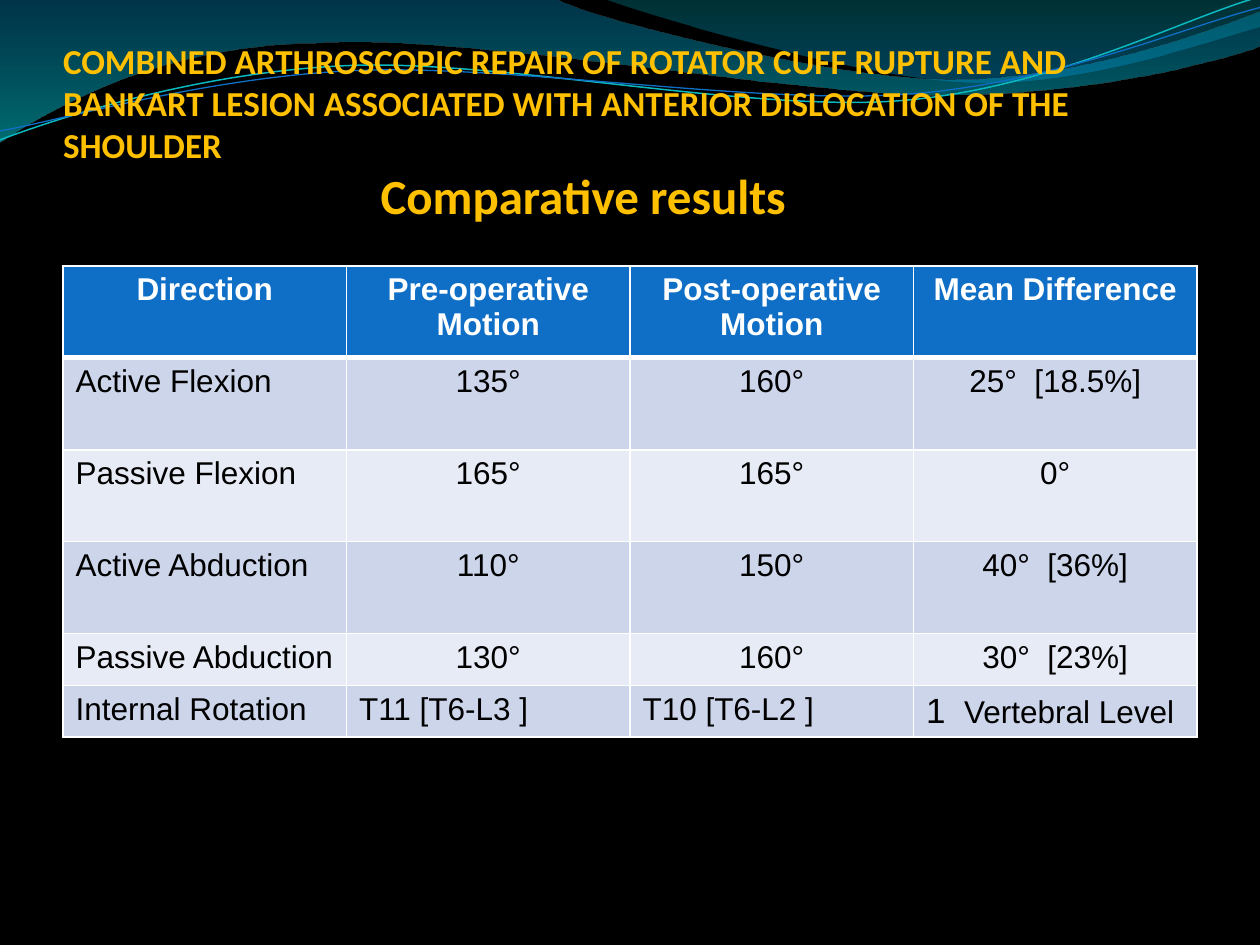
import math
from dataclasses import dataclass

from lxml import etree
from pptx import Presentation
from pptx.dml.color import RGBColor
from pptx.enum.text import MSO_ANCHOR, PP_ALIGN
from pptx.oxml.ns import qn
from pptx.util import Inches, Pt

LEFT, CENTER = PP_ALIGN.LEFT, PP_ALIGN.CENTER
BOTTOM = MSO_ANCHOR.BOTTOM
WIDTH, HEIGHT = 10, 7.5
MARGIN = 0.05 * WIDTH
CONTENT_WIDTH = WIDTH - 2 * MARGIN
BLACK, WHITE, GOLD, BLUE = "000000", "FFFFFF", "FFC000", "0F6FC6"
BANDS = ("CCD5EA", "E7EBF5")
TABLE_TOP = 2.11
TALL_ROW, SHORT_ROW = 0.73, 0.41
LINE_TILT = -2.7


@dataclass(frozen=True)
class Stop:
    position: float
    color: str
    opacity: int


@dataclass(frozen=True)
class Wave:
    """Points in inches: a start, then straight (1 point) or curved (3 point) segments."""
    start: tuple
    segments: tuple
    stops: tuple = ()
    line: str = ""
    line_width: float = 0
    center: tuple = (0, 0)
    tilt: float = 0


@dataclass(frozen=True)
class Piece:
    text: str
    size: float
    color: str
    font: str = "Arial"
    bold: bool = False


@dataclass(frozen=True)
class Row:
    texts: tuple
    height: float
    alignments: tuple = (LEFT, CENTER, CENTER, CENTER)


WAVES = (
    Wave((0, -0.01), (
        ((4.4, -0.01),),
        ((4.76, 0.17), (6.64, 0.63), (7.58, 0.63)),
        ((8.53, 0.63), (9.58, 0.26), (10, 0.09)),
        ((10.01, 0.36),),
        ((9.83, 0.44), (8.7, 0.76), (7.46, 0.75)),
        ((6.22, 0.75), (3.82, 0.28), (2.57, 0.34)),
        ((1.29, 0.35), (0.46, 0.83), (-0.01, 1.13)),
    ), stops=(Stop(0, "0074A1", 45), Stop(1, "00C6CF", 55))),
    Wave((4.79, -0.01), (
        ((5.09, 0.11), (6.82, 0.62), (7.69, 0.65)),
        ((8.56, 0.69), (9.61, 0.32), (10, 0.21)),
        ((10, 0),),
    ), stops=(Stop(0, "00A1A9", 30), Stop(0.8, "008BBF", 45))),
    Wave((0, 1.11), (
        ((0.48, 0.93), (1.58, 0.57), (2.77, 0.52)),
        ((3.95, 0.47), (5.93, 0.89), (7.13, 0.8)),
        ((8.33, 0.71), (9.38, 0.15), (9.98, -0.02)),
    ), line="0AB8BF", line_width=0.85, center=(4.99, 0.58), tilt=LINE_TILT),
    Wave((0, 1.04), (
        ((0.47, 0.96), (1.64, 0.61), (2.83, 0.56)),
        ((4.03, 0.51), (5.97, 0.83), (7.17, 0.75)),
        ((8.36, 0.67), (9.41, 0.21), (10, 0.06)),
    ), line=BLUE, line_width=0.75, center=(5, 0.59), tilt=LINE_TILT),
)

ROWS = (
    Row(("Direction", "Pre-operative Motion", "Post-operative Motion", "Mean Difference"),
        TALL_ROW, (CENTER,) * 4),
    Row(("Active Flexion", "135°", "160°", "25°  [18.5%]"), TALL_ROW),
    Row(("Passive Flexion", "165°", "165°", "0°"), TALL_ROW),
    Row(("Active Abduction", "110°", "150°", "40°  [36%]"), TALL_ROW),
    Row(("Passive Abduction", "130°", "160°", "30°  [23%]"), SHORT_ROW),
    Row(("Internal Rotation", "T11 [T6-L3 ]", "T10 [T6-L2 ]",
         (Piece("1 ", 20, BLACK), Piece(" Vertebral Level", 18, BLACK))),
        SHORT_ROW, (LEFT,) * 4),
)


def rgb(color: str) -> RGBColor:
    """Turn a hex string into a colour."""
    return RGBColor.from_string(color)


def untilted(point: tuple, wave: Wave) -> tuple:
    """Give a point's place in the wave's frame before it is rotated."""
    angle = math.radians(-wave.tilt)
    dx, dy = (value - middle for value, middle in zip(point, wave.center))
    x = wave.center[0] + dx * math.cos(angle) - dy * math.sin(angle)
    y = wave.center[1] + dx * math.sin(angle) + dy * math.cos(angle)
    return Inches(x), Inches(y)


def bend(shape, segments: tuple) -> None:
    """Join each three straight steps of a curved segment into one cubic curve."""
    steps = iter(list(shape.element.iter(qn("a:lnTo"))))
    for segment in segments:
        parts = [next(steps) for _ in segment]
        if len(parts) == 3:
            curve = etree.Element(qn("a:cubicBezTo"))
            parts[0].addprevious(curve)
            for part in parts:
                curve.append(part[0])
                part.getparent().remove(part)


def draw_wave(slide, wave: Wave) -> None:
    """Draw one filled band or thin line of the header decoration."""
    points = [untilted(point, wave) for segment in wave.segments for point in segment]
    builder = slide.shapes.build_freeform(*untilted(wave.start, wave))
    builder.add_line_segments(points, close=bool(wave.stops))
    shape = builder.convert_to_shape()
    bend(shape, wave.segments)
    shape.rotation = wave.tilt
    shape.shadow.inherit = False
    if not wave.stops:
        shape.fill.background()
        shape.line.color.rgb = rgb(wave.line)
        shape.line.width = Pt(wave.line_width)
        return
    shape.line.fill.background()
    shape.fill.gradient()
    shape.fill.gradient_angle = 270
    for target, stop in zip(shape.fill.gradient_stops, wave.stops):
        target.color.rgb = rgb(stop.color)
        target.position = stop.position
    for color, stop in zip(shape.element.spPr.iter(qn("a:srgbClr")), wave.stops):
        etree.SubElement(color, qn("a:alpha"), val=str(stop.opacity * 1000))


def add_run(paragraph, piece: Piece) -> None:
    """Add one formatted run."""
    run = paragraph.add_run()
    run.text = piece.text
    run.font.name = piece.font
    run.font.size = Pt(piece.size)
    run.font.bold = piece.bold
    run.font.color.rgb = rgb(piece.color)


def write_title(slide) -> None:
    """Place the title in front of the waves and write its two parts."""
    title = slide.shapes.title
    slide.shapes.element.append(title.element)
    title.left, title.top = Inches(MARGIN), Inches(-1.45)
    title.width, title.height = Inches(CONTENT_WIDTH), Inches(3.23)
    frame = title.text_frame
    frame.word_wrap = True
    frame.vertical_anchor = BOTTOM
    frame.margin_left = frame.margin_right = frame.margin_bottom = 0
    frame.margin_top = Inches(0.05)
    paragraph = frame.paragraphs[0]
    paragraph.alignment = LEFT
    paragraph.line_spacing = 1.0
    paragraph.space_before = Pt(0)
    tabs = etree.SubElement(paragraph._p.get_or_add_pPr(), qn("a:tabLst"))
    etree.SubElement(tabs, qn("a:tab"), pos=str(Inches(2.52)), algn="l")
    add_run(paragraph, Piece(
        "COMBINED ARTHROSCOPIC REPAIR OF ROTATOR CUFF RUPTURE AND BANKART LESION "
        "ASSOCIATED WITH ANTERIOR DISLOCATION OF THE SHOULDER", 20, GOLD, "Calibri", True))
    paragraph.add_line_break()
    etree.SubElement(paragraph._p.find(qn("a:br")), qn("a:rPr"), sz="2000")
    add_run(paragraph, Piece("\tComparative results", 28, GOLD, "Calibri", True))


def set_borders(cell, top: float, bottom: float) -> None:
    """Give a cell white borders, with its own top and bottom widths."""
    properties = cell._tc.get_or_add_tcPr()
    for side, width in (("L", 1), ("R", 1), ("T", top), ("B", bottom)):
        line = etree.SubElement(properties, qn(f"a:ln{side}"), w=str(Pt(width)))
        fill = etree.SubElement(line, qn("a:solidFill"))
        etree.SubElement(fill, qn("a:srgbClr"), val=WHITE)


def add_results_table(slide) -> None:
    """Build the table of motion results."""
    height = sum(row.height for row in ROWS)
    table = slide.shapes.add_table(len(ROWS), len(ROWS[0].texts), Inches(MARGIN),
                                   Inches(TABLE_TOP), Inches(CONTENT_WIDTH), Inches(height)).table
    for index, row in enumerate(ROWS):
        table.rows[index].height = Inches(row.height)
        header = index == 0
        for column, (text, alignment) in enumerate(zip(row.texts, row.alignments)):
            cell = table.cell(index, column)
            set_borders(cell, 3 if index == 1 else 1, 3 if header else 1)
            cell.fill.solid()
            cell.fill.fore_color.rgb = rgb(BLUE if header else BANDS[(index - 1) % 2])
            paragraph = cell.text_frame.paragraphs[0]
            paragraph.alignment = alignment
            pieces = text if isinstance(text, tuple) else (
                Piece(text, 18, WHITE if header else BLACK, bold=header),)
            for piece in pieces:
                add_run(paragraph, piece)


def main() -> None:
    """Build and save the slide."""
    presentation = Presentation()
    presentation.slide_width, presentation.slide_height = Inches(WIDTH), Inches(HEIGHT)
    slide = presentation.slides.add_slide(presentation.slide_layouts[5])
    slide.background.fill.solid()
    slide.background.fill.fore_color.rgb = rgb(BLACK)
    for wave in WAVES:
        draw_wave(slide, wave)
    write_title(slide)
    add_results_table(slide)
    presentation.save("out.pptx")


if __name__ == "__main__":
    main()
